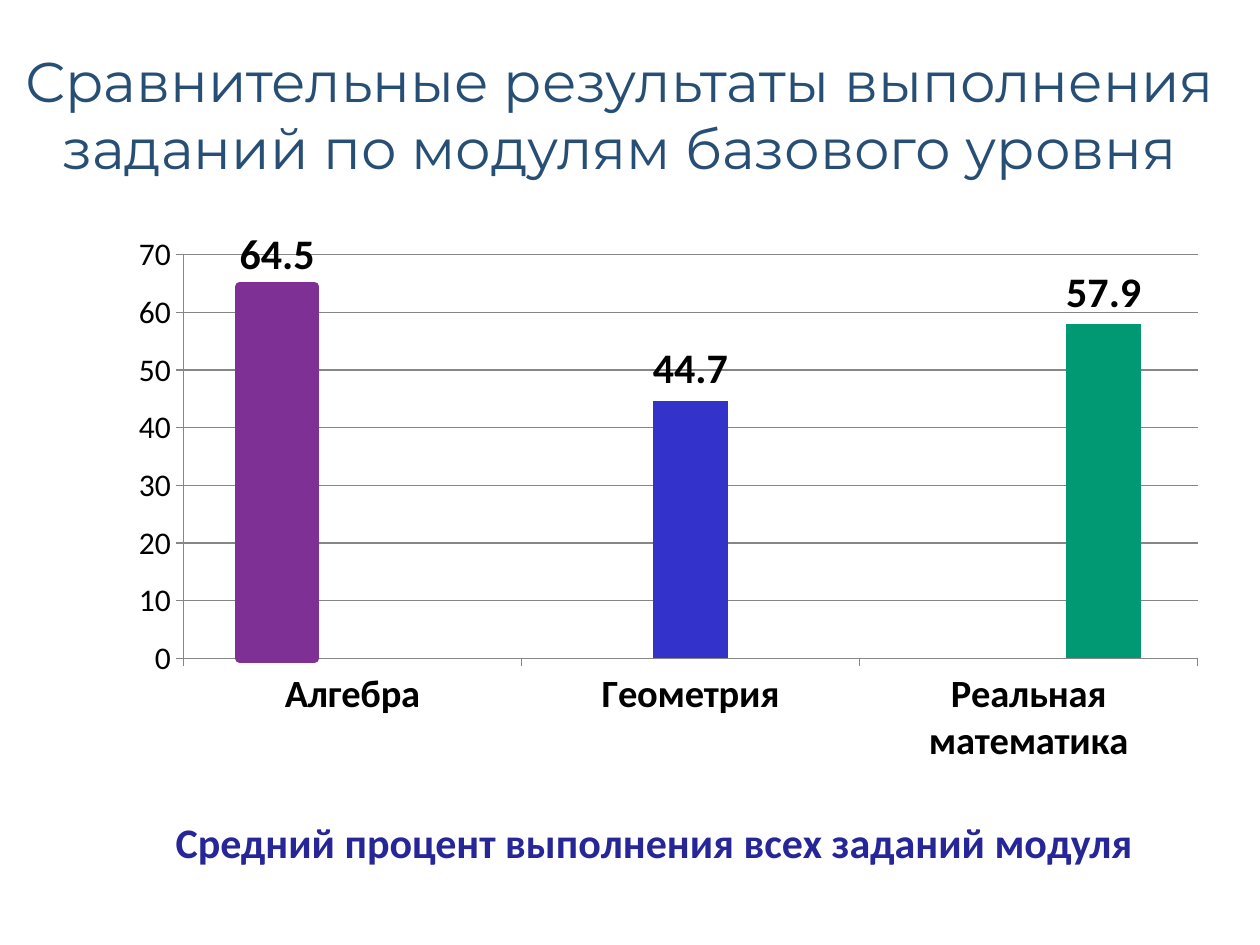
import pptx
import pptx.chart.data
import pptx.dml.color
import pptx.enum.chart
import pptx.enum.shapes
import pptx.enum.text
import pptx.oxml
import pptx.oxml.ns
import pptx.util

Pt = pptx.util.Pt


def color(hex_string):
    return pptx.dml.color.RGBColor.from_string(hex_string)


def format_text(shape, font_name, size, hex_string, bold):
    frame = shape.text_frame
    frame.word_wrap = True
    frame.vertical_anchor = pptx.enum.text.MSO_ANCHOR.MIDDLE
    paragraph = frame.paragraphs[0]
    paragraph.alignment = pptx.enum.text.PP_ALIGN.CENTER
    font = paragraph.runs[0].font
    font.name = font_name
    font.size = Pt(size)
    font.bold = bold
    font.color.rgb = color(hex_string)


presentation = pptx.Presentation()
presentation.slide_width = Pt(720)
presentation.slide_height = Pt(540)
slide = presentation.slides.add_slide(presentation.slide_layouts[5])

title = slide.shapes.title
title.left, title.top, title.width, title.height = Pt(0), Pt(11.5), Pt(708.5), Pt(106.5)
title.text_frame.text = "Сравнительные результаты выполнения заданий по модулям базового уровня"
format_text(title, "Montserrat", 32, "274E75", False)

modules = [
    ("Алгебра", 64.5, "7F3094"),
    ("Геометрия", 44.7, "3333CC"),
    ("Реальная математика", 57.9, "009973"),
]
chart_data = pptx.chart.data.CategoryChartData()
chart_data.categories = [name for name, value, fill in modules]
for index, (name, value, fill) in enumerate(modules):
    values = [None] * len(modules)
    values[index] = value
    chart_data.add_series(f"Series {index + 1}", values)

chart = slide.shapes.add_chart(
    pptx.enum.chart.XL_CHART_TYPE.COLUMN_CLUSTERED,
    Pt(11.5), Pt(129.6), Pt(686), Pt(371.5), chart_data,
).chart
chart.has_legend = False
chart.has_title = False
chart.font.name = "Calibri"
chart.font.size = Pt(18)
chart.font.color.rgb = color("000000")

plot = chart.plots[0]
plot.gap_width = 150
plot.overlap = 0
plot.vary_by_categories = False
for series, (name, value, fill) in zip(plot.series, modules):
    series.format.fill.solid()
    series.format.fill.fore_color.rgb = color(fill)
    labels = series.data_labels
    labels.show_value = True
    labels.position = pptx.enum.chart.XL_LABEL_POSITION.OUTSIDE_END
    labels.font.size = Pt(24)
    labels.font.bold = True
algebra_line = plot.series[0].format.line
algebra_line.color.rgb = color(modules[0][2])
algebra_line.width = Pt(5)

category_axis = chart.category_axis
category_axis.tick_labels.font.size = Pt(22)
category_axis.tick_labels.font.bold = True
value_axis = chart.value_axis
value_axis.minimum_scale = 0
value_axis.maximum_scale = 70
value_axis.major_unit = 10
value_axis.has_major_gridlines = True
for axis in (category_axis, value_axis):
    axis.major_tick_mark = pptx.enum.chart.XL_TICK_MARK.OUTSIDE
for line in (category_axis.format.line, value_axis.format.line, value_axis.major_gridlines.format.line):
    line.color.rgb = color("868686")
    line.width = Pt(0.75)

plot_area = chart._chartSpace.chart.plotArea
for old_layout in plot_area.findall(pptx.oxml.ns.qn("c:layout")):
    plot_area.remove(old_layout)
position = {"x": 0.136, "y": 0.043, "w": 0.845, "h": 0.621}
plot_area.insert(0, pptx.oxml.parse_xml(
    f'<c:layout {pptx.oxml.ns.nsdecls("c")}><c:manualLayout>'
    '<c:layoutTarget val="inner"/><c:xMode val="edge"/><c:yMode val="edge"/>'
    + "".join(f'<c:{key} val="{share}"/>' for key, share in position.items())
    + "</c:manualLayout></c:layout>"
))

caption = slide.shapes.add_shape(
    pptx.enum.shapes.MSO_SHAPE.RECTANGLE, Pt(50.4), Pt(455.8), Pt(652.3), Pt(50.4)
)
caption.shadow.inherit = False
caption.fill.solid()
caption.fill.fore_color.rgb = color("FFFFFF")
caption.line.color.rgb = color("FFFFFF")
caption.line.width = Pt(2)
caption.text_frame.text = "Средний процент выполнения всех заданий модуля "
format_text(caption, "Calibri", 24, "262699", True)

presentation.save("out.pptx")
